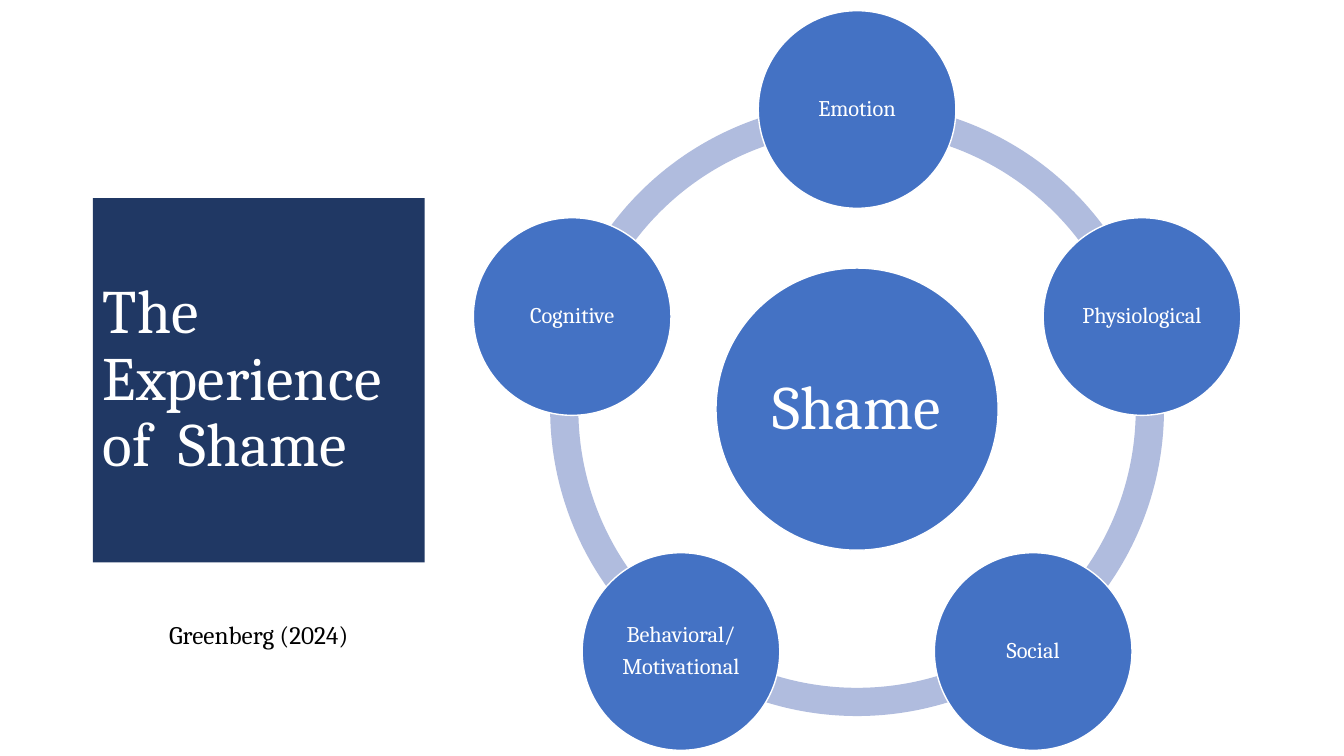
"""Build the slide on the experience of shame: a title, a citation and a radial cycle."""
from math import cos, radians, sin

from pptx import Presentation
from pptx.dml.color import RGBColor
from pptx.enum.shapes import MSO_SHAPE
from pptx.enum.text import MSO_ANCHOR, MSO_AUTO_SIZE, PP_ALIGN
from pptx.util import Cm, Pt

TITLE = "The Experience of  Shame"
CITATION = "Greenberg (2024)"
CORE = "Shame"
ASPECTS = ["Emotion", "Physiological", "Social", "Behavioral/\nMotivational", "Cognitive"]

WHITE = RGBColor(0xFF, 0xFF, 0xFF)
BLACK = RGBColor(0x00, 0x00, 0x00)
NAVY = RGBColor(0x20, 0x38, 0x64)
BLUE = RGBColor(0x44, 0x72, 0xC4)
PALE_BLUE = RGBColor(0xB0, 0xBC, 0xDE)

FONT = "Cambria"
CENTER_X, CENTER_Y = 21.6, 10.31
RING_SIZE = 15.47
RING_THICKNESS = 0.046
ORBIT = 7.55
CORE_SIZE, ASPECT_SIZE = 7.11, 4.98
STEP = 360 / len(ASPECTS)
ANGLE_UNIT = 0.6


def write(shape, text, size, color=WHITE, align=PP_ALIGN.CENTER,
          anchor=MSO_ANCHOR.MIDDLE, line_spacing=0.9, space_after=0, inset=None):
    """Fill a shape with formatted text, one paragraph per line."""
    frame = shape.text_frame
    frame.text = text
    frame.word_wrap = True
    frame.auto_size = MSO_AUTO_SIZE.NONE
    frame.vertical_anchor = anchor
    if inset is not None:
        frame.margin_left = frame.margin_right = Cm(inset)
        frame.margin_top = frame.margin_bottom = Cm(inset)
    for paragraph in frame.paragraphs:
        paragraph.alignment = align
        paragraph.line_spacing = line_spacing
        paragraph.space_before = Pt(0)
        paragraph.space_after = Pt(space_after)
        paragraph.font.name = FONT
        paragraph.font.size = Pt(size)
        paragraph.font.color.rgb = color


def add_round(slide, preset, x, y, diameter, fill):
    """Add a filled round shape centred on a point."""
    shape = slide.shapes.add_shape(preset, Cm(x - diameter / 2), Cm(y - diameter / 2),
                                   Cm(diameter), Cm(diameter))
    shape.shadow.inherit = False
    shape.fill.solid()
    shape.fill.fore_color.rgb = fill
    shape.line.fill.background()
    return shape


def add_circle(slide, text, x, y, diameter, size, inset):
    """Add a labelled blue circle with a white outline."""
    circle = add_round(slide, MSO_SHAPE.OVAL, x, y, diameter, BLUE)
    circle.line.color.rgb = WHITE
    circle.line.width = Pt(1)
    write(circle, text, size, space_after=size * 0.35, inset=inset)


def main():
    """Lay out the slide and save it."""
    deck = Presentation()
    deck.slide_width, deck.slide_height = Cm(33.87), Cm(19.05)
    slide = deck.slides.add_slide(deck.slide_layouts[5])

    title = slide.shapes.title
    title.left, title.top, title.width, title.height = Cm(2.34), Cm(4.99), Cm(8.36), Cm(9.18)
    title.fill.solid()
    title.fill.fore_color.rgb = NAVY
    write(title, TITLE, 44, align=PP_ALIGN.LEFT)

    citation = slide.shapes.add_textbox(Cm(2.34), Cm(15.49), Cm(8.36), Cm(1.03))
    write(citation, CITATION, 18, color=BLACK, anchor=MSO_ANCHOR.TOP, line_spacing=1)

    angles = [270 + STEP * position for position in range(len(ASPECTS))]
    for angle in angles:
        arc = add_round(slide, MSO_SHAPE.BLOCK_ARC, CENTER_X, CENTER_Y, RING_SIZE, PALE_BLUE)
        arc.adjustments[0] = angle % 360 * ANGLE_UNIT
        arc.adjustments[1] = (angle + STEP) % 360 * ANGLE_UNIT
        arc.adjustments[2] = RING_THICKNESS

    add_circle(slide, CORE, CENTER_X, CENTER_Y, CORE_SIZE, 44, 0.15)
    for aspect, angle in zip(ASPECTS, angles):
        x = CENTER_X + ORBIT * cos(radians(angle))
        y = CENTER_Y + ORBIT * sin(radians(angle))
        add_circle(slide, aspect, x, y, ASPECT_SIZE, 16, 0.05)

    deck.save("out.pptx")


if __name__ == "__main__":
    main()
